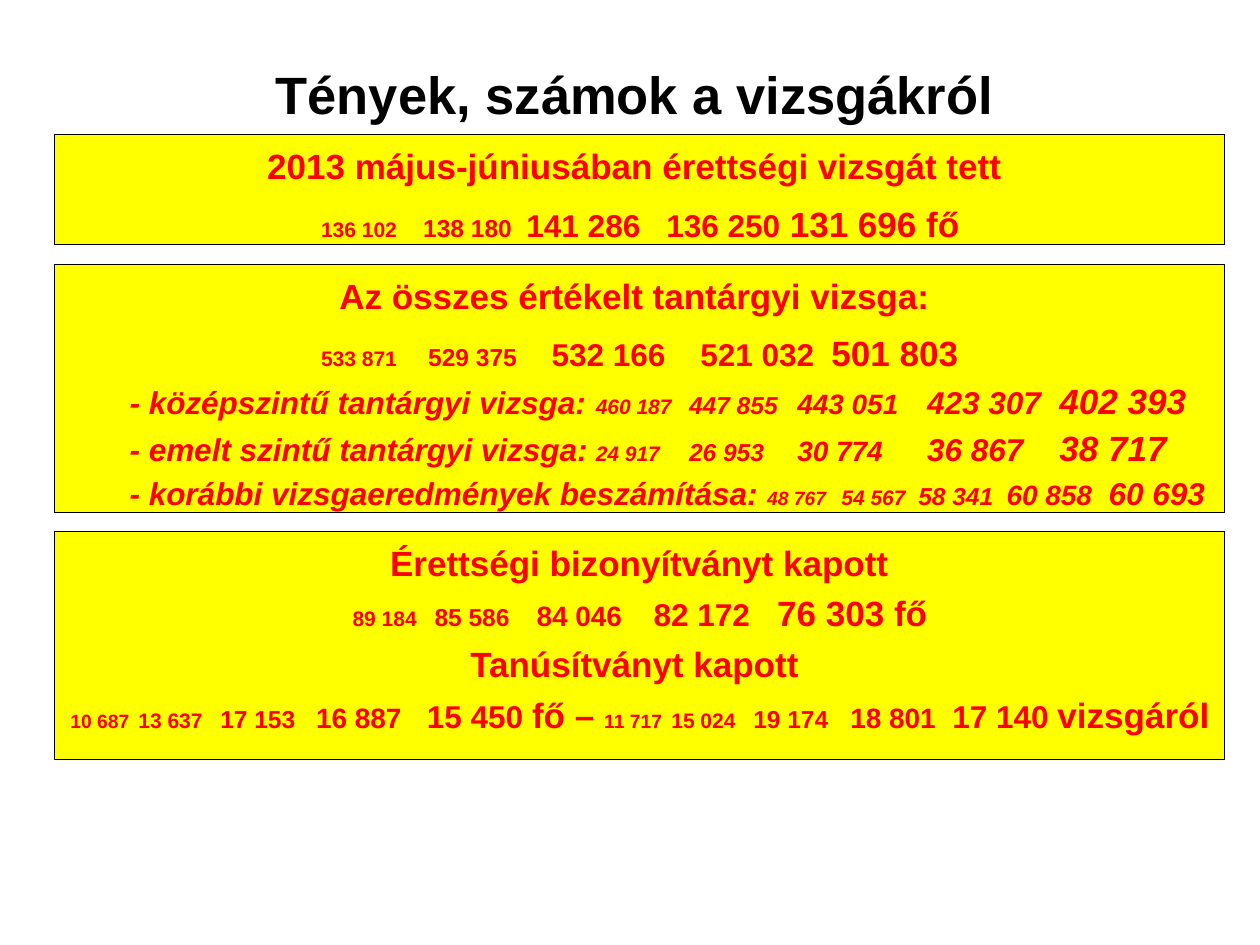
from lxml.etree import SubElement as Sub
from pptx import Presentation
from pptx.dml.color import RGBColor
from pptx.enum.shapes import MSO_SHAPE as Form
from pptx.enum.text import MSO_ANCHOR as Anchor, PP_ALIGN as Align
from pptx.oxml.ns import qn
from pptx.util import Inches, Pt

deck = Presentation()
deck.slide_width, deck.slide_height = Inches(10), Inches(7.5)
# Lengths are counted on a grid of 100 columns by 100 rows
COL, ROW = deck.slide_width / 100, deck.slide_height / 100
slide = deck.slides.add_slide(deck.slide_layouts[5])


def tint(code):
    return RGBColor.from_string(code)


def add_run(para, text, size, code, slant=None):
    run = para.add_run()
    run.text = text
    font = run.font
    font.name, font.size, font.bold, font.italic = "Arial", Pt(size), True, slant
    font.color.rgb = tint(code)


# Title
title = slide.shapes.title
title.left, title.top = int(11.4 * COL), int(3.73 * ROW)
title.width, title.height = int(79.1 * COL), int(12.4 * ROW)
title.text_frame.vertical_anchor = Anchor.MIDDLE
para = title.text_frame.paragraphs[0]
para.alignment = Align.CENTER
add_run(para, "Tények, számok a vizsgákról ", 30, "000000")

# Tab stops in columns from the left inset; a line without stops is centred
LEVEL = [5, 42, 49.4, 58, 68.3, 78.8]

# Each box: top row, height in rows, lines of (stops, space before, runs)
BOXES = [
    (14.27, 11.6, [
        ([], 0, [("2013 május-júniusában érettségi vizsgát tett ", 20)]),
        ([20.2, 28.3, 36.5, 47.6, 57.4], 9,
         [("\t136 102", 12), ("\t138 180", 14), ("\t141 286", 18),
          ("\t136 250", 18), ("\t131 696 fő", 20)]),
    ]),
    (28, 26.27, [
        ([], 0, [("Az összes értékelt tantárgyi vizsga: ", 20)]),
        ([20.2, 28.7, 38.5, 50.3, 60.7], 9,
         [("\t533 871", 12), ("\t529 375", 14), ("\t532 166", 18),
          ("\t521 032", 18), ("\t501 803", 20)]),
        (LEVEL, 3,
         [("\t- középszintű tantárgyi vizsga:", 18), ("\t460 187", 12),
          ("\t447 855", 14), ("\t443 051", 16), ("\t423 307", 18),
          ("\t402 393", 20)]),
        (LEVEL, 3,
         [("\t- emelt szintű tantárgyi vizsga:", 18), ("\t24 917", 12),
          ("\t26 953", 14), ("\t30 774", 16), ("\t36 867", 18),
          ("\t38 717", 20)]),
        ([5, 55.6, 61.5, 67.6, 74.6, 82.7], 3,
         [("\t- korábbi vizsgaeredmények beszámítása:", 18), ("\t48 767", 11),
          ("\t54 567", 12), ("\t58 341", 14), ("\t60 858", 16),
          ("\t60 693", 18)]),
    ]),
    (56.27, 24.13, [
        ([], 0, [("Érettségi bizonyítványt kapott", 20)]),
        ([22.7, 29.2, 37.3, 46.6, 56.4], 5,
         [("\t89 184", 12), ("\t85 586", 14), ("\t84 046", 16),
          ("\t82 172", 18), ("\t76 303 fő", 20)]),
        ([], 5, [("Tanúsítványt kapott ", 20)]),
        ([0.3, 5.7, 12.2, 19.8, 28.6, 48, 54.5, 62.2, 70.3], 5,
         [("\t10 687", 11), ("\t13 637", 12), ("\t17 153", 14),
          ("\t16 887", 16), ("\t15 450 ", 18), ("fő – ", 20),
          ("11 717", 11), ("\t15 024", 12), ("\t19 174", 14),
          ("\t18 801", 16), ("\t17 140 ", 18), ("vizsgáról", 20)]),
    ]),
]

# Yellow boxes
for top, high, lines in BOXES:
    box = slide.shapes.add_shape(Form.RECTANGLE, int(4.3 * COL), int(top * ROW),
                                 int(92.9 * COL), int(high * ROW))
    box.shadow.inherit = False
    box.fill.solid()
    box.fill.fore_color.rgb = tint("FFFF00")
    box.line.color.rgb = tint("000000")
    box.line.width = Pt(0.75)
    frame = box.text_frame
    frame.word_wrap = True
    frame.vertical_anchor = Anchor.TOP
    frame.margin_top = int(ROW)

    # Lines of text, each with its own stops
    for num, (stops, gap, runs) in enumerate(lines):
        para = frame.add_paragraph() if num else frame.paragraphs[0]
        para.alignment = Align.LEFT if stops else Align.CENTER
        if stops:
            tabs = Sub(para._p.get_or_add_pPr(), qn("a:tabLst"))
            for stop in stops:
                Sub(tabs, qn("a:tab"), pos=str(int(stop * COL)), algn="l")
        para.space_before = Pt(gap)
        slant = len(stops) == 6  # label and five years
        for text, size in runs:
            add_run(para, text, size, "FF0000", slant)

deck.save("out.pptx")
